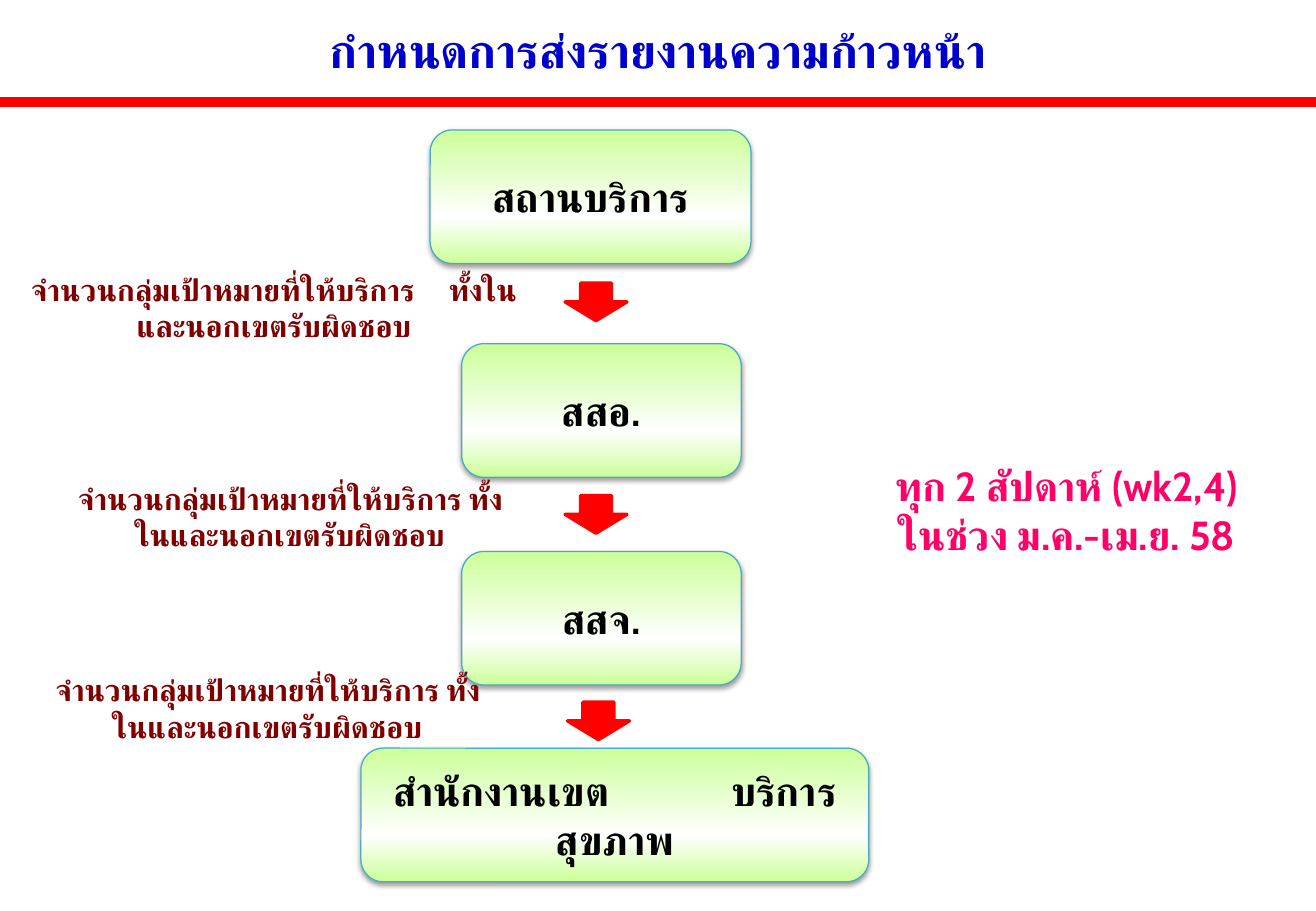
"""Build the slide on the progress-report schedule from service units to the regional office."""
from lxml import etree
from pptx import Presentation
from pptx.dml.color import RGBColor
from pptx.enum.shapes import MSO_CONNECTOR as Line, MSO_SHAPE as Shape
from pptx.enum.text import MSO_ANCHOR as Anchor, MSO_AUTO_SIZE as AutoSize, PP_ALIGN as Align
from pptx.oxml import parse_xml
from pptx.oxml.ns import nsdecls, qn
from pptx.util import Inches, Pt

FONT = "Cabin"
RED = "FF0000"


def color(value):
    return RGBColor.from_string(value)


def write(frame, paragraphs, size, ink):
    frame.word_wrap = True
    for index, pieces in enumerate(paragraphs):
        paragraph = frame.paragraphs[0] if index == 0 else frame.add_paragraph()
        paragraph.alignment = Align.CENTER
        for text, spacing in pieces:
            run = paragraph.add_run()
            run.text = text
            run.font.size = Pt(size)
            run.font.bold = True
            run.font.name = FONT
            run.font.color.rgb = color(ink)
            properties = run.font._element
            etree.SubElement(properties, qn("a:cs")).set("typeface", FONT)
            if spacing:
                properties.set("spc", str(spacing * 100))


prs = Presentation()
prs.slide_width, prs.slide_height = Inches(10.83), Inches(7.5)
slide = prs.slides.add_slide(prs.slide_layouts[6])
shapes = slide.shapes

title_rule = shapes.add_connector(Line.STRAIGHT, 0, Inches(0.84), prs.slide_width, Inches(0.84))
title_rule.line.color.rgb = color(RED)
title_rule.line.width = Pt(6)
etree.SubElement(title_rule._element.spPr, qn("a:effectLst"))

offices = [
    (3.54, 1.07, 2.64, [("สถานบริการ", 0)]),
    (3.8, 2.83, 2.3, [("สสอ.", 0)]),
    (3.8, 4.54, 2.3, [("สสจ.", 0)]),
    (2.97, 6.16, 4.18, [("สำนักงานเขต", 0), (" ", 67), ("บริการสุขภาพ", 0)]),
]
for left, top, width, pieces in offices:
    office = shapes.add_shape(Shape.ROUNDED_RECTANGLE, Inches(left), Inches(top), Inches(width), Inches(1.1))
    office.fill.gradient()
    office.fill.gradient_angle = 90
    stops = office._element.spPr.find(qn("a:gradFill")).find(qn("a:gsLst"))
    for stop in list(stops):
        stops.remove(stop)
    for position, tint in [(0, "CCFF99"), (35, "FFFFFF"), (100, "CCFF99")]:
        stop = etree.SubElement(stops, qn("a:gs"), pos=str(position * 1000))
        etree.SubElement(stop, qn("a:srgbClr"), val=tint)
    office.line.color.rgb = color("46AAC5")
    office.line.width = Pt(0.75)
    office.shadow.inherit = False
    office._element.spPr.find(qn("a:effectLst")).append(parse_xml(
        f'<a:outerShdw {nsdecls("a")} blurRad="40000" dist="20000" dir="5400000" rotWithShape="0">'
        '<a:srgbClr val="000000"><a:alpha val="38000"/></a:srgbClr></a:outerShdw>'))
    office.text_frame.vertical_anchor = Anchor.MIDDLE
    write(office.text_frame, [pieces], 24, "000000")

for left, top in [(4.65, 2.33), (4.65, 4.08), (4.67, 5.78)]:
    arrow = shapes.add_shape(Shape.DOWN_ARROW, Inches(left), Inches(top), Inches(0.51), Inches(0.31))
    arrow.fill.solid()
    arrow.fill.fore_color.rgb = color(RED)
    arrow.line.color.rgb = color(RED)
    arrow.line.width = Pt(2)
    arrow.shadow.inherit = False

target_group = "จำนวนกลุ่มเป้าหมายที่ให้บริการ"
coverage = "ทั้งในและนอกเขตรับผิดชอบ"
reported = [(f"{target_group} {coverage}", 0)]
captions = [
    (0, 0.13, 10.83, 0.57, [[("กำหนดการส่งรายงานความก้าวหน้า", 0)]], 28, "0000CC"),
    (0.11, 2.18, 4.29, 0.71, [[(target_group, 0), (" ", 16), (coverage, 0)]], 18, "800000"),
    (0.46, 3.9, 3.85, 0.71, [reported], 18, "800000"),
    (0.22, 5.48, 3.96, 0.71, [reported], 18, "800000"),
    (6.86, 3.75, 3.84, 0.91,
     [[("ทุก 2 สัปดาห์ (wk2,4)", 0)], [("ในช่วง ม.ค.-เม.ย. 58", 0)]], 24, "FF0066"),
]
for left, top, width, height, paragraphs, size, ink in captions:
    caption = shapes.add_textbox(Inches(left), Inches(top), Inches(width), Inches(height))
    caption.text_frame.auto_size = AutoSize.SHAPE_TO_FIT_TEXT
    write(caption.text_frame, paragraphs, size, ink)

prs.save("out.pptx")
